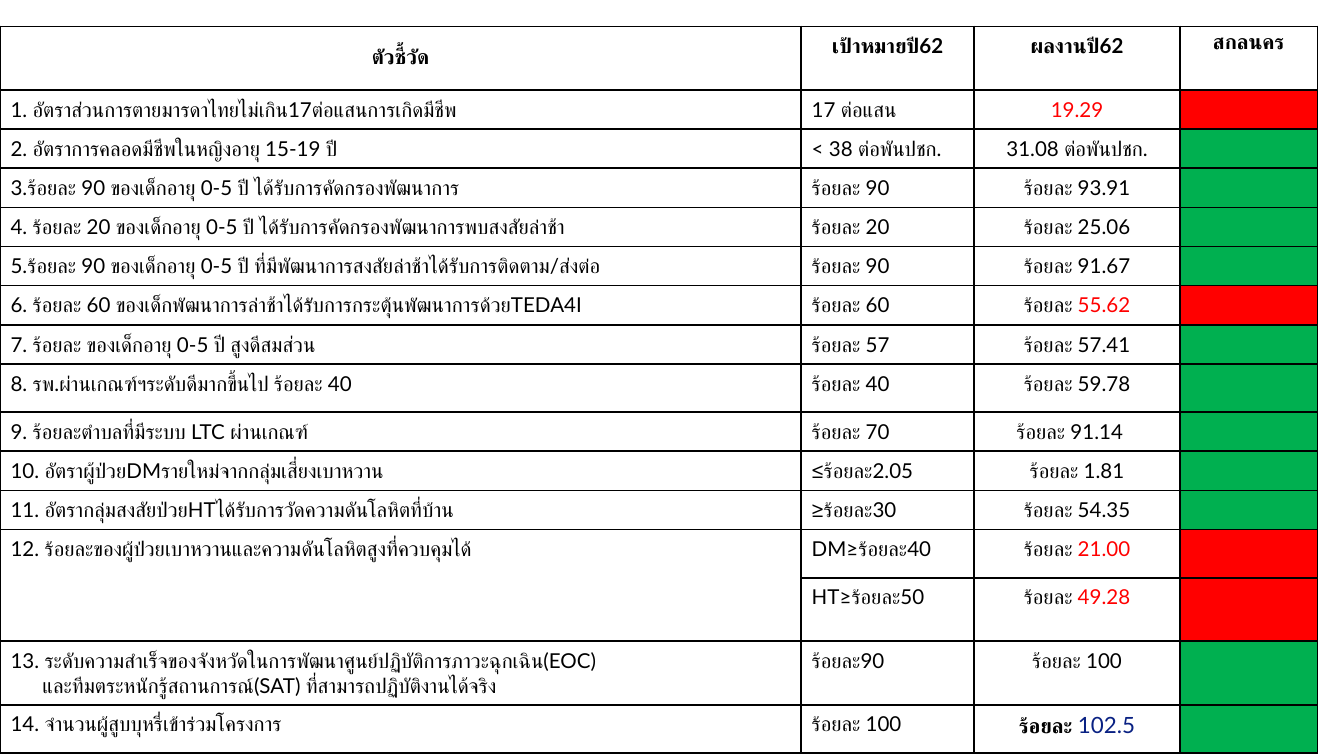
from dataclasses import dataclass

from lxml import etree
from pptx import Presentation
from pptx.dml.color import RGBColor
from pptx.enum import text
from pptx.oxml import ns
from pptx.table import _Cell
from pptx.util import Cm, Pt

BLACK = RGBColor(0x00, 0x00, 0x00)
RED = RGBColor(0xFF, 0x00, 0x00)
GREEN = RGBColor(0x00, 0xB0, 0x50)
NAVY = RGBColor(0x09, 0x21, 0x83)

FONT_SIZE = Pt(11)
BORDER = Pt(1)
INDENT = Cm(0.6)
NORMAL, MEDIUM, TALL = Cm(0.73), Cm(0.91), Cm(1.2)
COLUMN_WIDTHS = (Cm(15.14), Cm(3.27), Cm(3.89), Cm(2.6))
CELL_FORMAT = {
    "margin_left": Cm(0.2),
    "margin_right": Cm(0.2),
    "margin_top": Cm(0.13),
    "margin_bottom": Cm(0.13),
}
BASE_FONT = {"name": "Lato", "size": FONT_SIZE, "bold": False}
CENTER, LEFT = text.PP_ALIGN.CENTER, text.PP_ALIGN.LEFT


@dataclass(frozen=True)
class Part:
    """A stretch of text with one look."""
    words: str
    color: RGBColor = BLACK
    size: Pt = FONT_SIZE
    bold: bool = False


@dataclass(frozen=True)
class Indicator:
    title: str
    target: str
    result: tuple[Part, ...]
    status: RGBColor = GREEN
    height: Cm = NORMAL
    second_line: str = ""
    result_indented: bool = False


def passed(title: str, target: str, result: str, **options) -> Indicator:
    return Indicator(title, target, (Part(result),), **options)


def missed(title: str, target: str, value: str, height: Cm = NORMAL) -> Indicator:
    return Indicator(title, target, (Part("ร้อยละ "), Part(value, RED)), RED, height)


HEADINGS = ("ตัวชี้วัด", "เป้าหมายปี62", "ผลงานปี62", "สกลนคร")
INDICATORS = (
    Indicator("1. อัตราส่วนการตายมารดาไทยไม่เกิน17ต่อแสนการเกิดมีชีพ", "17 ต่อแสน",
              (Part("19.29", RED),), RED),
    passed("2. อัตราการคลอดมีชีพในหญิงอายุ 15-19 ปี", "< 38 ต่อพันปชก.", "31.08 ต่อพันปชก."),
    passed("3.ร้อยละ 90 ของเด็กอายุ 0-5 ปี ได้รับการคัดกรองพัฒนาการ", "ร้อยละ 90", "ร้อยละ 93.91"),
    passed("4. ร้อยละ 20 ของเด็กอายุ 0-5 ปี ได้รับการคัดกรองพัฒนาการพบสงสัยล่าช้า",
           "ร้อยละ 20", "ร้อยละ 25.06"),
    passed("5.ร้อยละ 90 ของเด็กอายุ 0-5 ปี ที่มีพัฒนาการสงสัยล่าช้าได้รับการติดตาม/ส่งต่อ",
           "ร้อยละ 90", "ร้อยละ 91.67"),
    missed("6. ร้อยละ 60 ของเด็กพัฒนาการล่าช้าได้รับการกระตุ้นพัฒนาการด้วยTEDA4I",
           "ร้อยละ 60", "55.62"),
    passed("7. ร้อยละ ของเด็กอายุ 0-5 ปี สูงดีสมส่วน", "ร้อยละ 57", "ร้อยละ 57.41"),
    passed("8. รพ.ผ่านเกณฑ์ฯระดับดีมากขึ้นไป ร้อยละ 40", "ร้อยละ 40", "ร้อยละ 59.78",
           height=MEDIUM),
    passed("9. ร้อยละตำบลที่มีระบบ LTC ผ่านเกณฑ์", "ร้อยละ 70", "ร้อยละ 91.14",
           result_indented=True),
    passed("10. อัตราผู้ป่วยDMรายใหม่จากกลุ่มเสี่ยงเบาหวาน", "≤ร้อยละ2.05", "ร้อยละ 1.81"),
    passed("11. อัตรากลุ่มสงสัยป่วยHTได้รับการวัดความดันโลหิตที่บ้าน", "≥ร้อยละ30", "ร้อยละ 54.35"),
    missed("12. ร้อยละของผู้ป่วยเบาหวานและความดันโลหิตสูงที่ควบคุมได้", "DM≥ร้อยละ40", "21.00",
           MEDIUM),
    missed("", "HT≥ร้อยละ50", "49.28", TALL),
    passed("13. ระดับความสำเร็จของจังหวัดในการพัฒนาศูนย์ปฏิบัติการภาวะฉุกเฉิน(EOC)",
           "ร้อยละ90", "ร้อยละ 100", height=TALL,
           second_line="และทีมตระหนักรู้สถานการณ์(SAT) ที่สามารถปฏิบัติงานได้จริง"),
    Indicator("14. จำนวนผู้สูบบุหรี่เข้าร่วมโครงการ", "ร้อยละ 100",
              (Part("ร้อยละ ", bold=True), Part("102.5", NAVY, Pt(12))), height=MEDIUM),
)


def write(paragraph, parts: tuple[Part, ...], align=LEFT, indented: bool = False) -> None:
    paragraph.alignment = align
    if indented:
        paragraph._p.get_or_add_pPr().set("marL", str(INDENT))
    for part in parts:
        run = paragraph.add_run()
        run.text = part.words
        for key, value in (BASE_FONT | {"size": part.size, "bold": part.bold}).items():
            setattr(run.font, key, value)
        run.font.color.rgb = part.color


def prepare(cell: _Cell) -> None:
    """Set margins, black borders, no fill and a small size for empty text."""
    for key, value in CELL_FORMAT.items():
        setattr(cell, key, value)
    properties = cell._tc.get_or_add_tcPr()
    for side in ("lnL", "lnR", "lnT", "lnB"):
        line = etree.SubElement(properties, ns.qn(f"a:{side}"), w=str(BORDER))
        solid = etree.SubElement(line, ns.qn("a:solidFill"))
        etree.SubElement(solid, ns.qn("a:srgbClr"), val=str(BLACK))
    cell.fill.background()
    paragraph = cell.text_frame.paragraphs[0]._p
    etree.SubElement(paragraph, ns.qn("a:endParaRPr"), sz=str(int(FONT_SIZE.pt * 100)))


def fill_row(cells: list[_Cell], indicator: Indicator) -> None:
    title, target, result, status = cells
    if indicator.title:
        write(title.text_frame.paragraphs[0], (Part(indicator.title),))
    if indicator.second_line:
        write(title.text_frame.add_paragraph(), (Part(indicator.second_line),), indented=True)
    write(target.text_frame.paragraphs[0], (Part(indicator.target),))
    write(result.text_frame.paragraphs[0], indicator.result,
          LEFT if indicator.result_indented else CENTER, indicator.result_indented)
    status.fill.solid()
    status.fill.fore_color.rgb = indicator.status


def main() -> None:
    deck = Presentation()
    deck.slide_width, deck.slide_height = Cm(25.4), Cm(14.29)
    slide = deck.slides.add_slide(deck.slide_layouts[6])
    heights = [TALL] + [indicator.height for indicator in INDICATORS]
    table = slide.shapes.add_table(len(heights), len(COLUMN_WIDTHS), Cm(0), Cm(0.5),
                                   sum(COLUMN_WIDTHS), sum(heights)).table
    table.first_row = table.horz_banding = False
    for column, width in zip(table.columns, COLUMN_WIDTHS):
        column.width = width
    for row, height in zip(table.rows, heights):
        row.height = height
    for cell in table.iter_cells():
        prepare(cell)

    for cell, heading in zip(table.rows[0].cells, HEADINGS):
        write(cell.text_frame.paragraphs[0], (Part(heading, bold=True),), CENTER)
    table.cell(0, 0).vertical_anchor = text.MSO_ANCHOR.MIDDLE
    for number, indicator in enumerate(INDICATORS, start=1):
        fill_row(list(table.rows[number].cells), indicator)
        if not indicator.title:
            table.cell(number - 1, 0).merge(table.cell(number, 0))

    deck.save("out.pptx")


if __name__ == "__main__":
    main()
